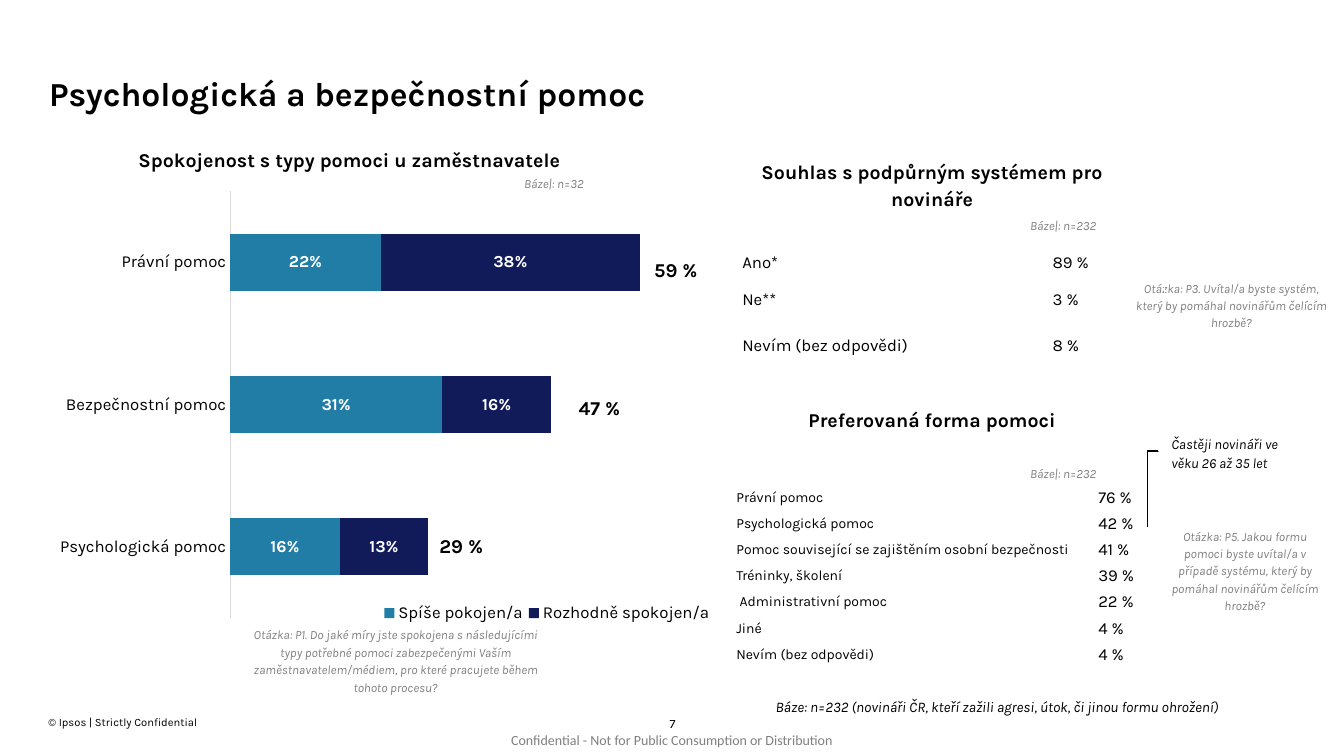
from lxml import etree
from pptx import Presentation
from pptx import util as u
from pptx.chart.data import CategoryChartData
from pptx.dml.color import RGBColor
from pptx.enum import chart as ch, shapes, text
from pptx.oxml import parse_xml
from pptx.oxml.ns import nsdecls, qn

Cm = u.Cm
BLACK, GREY, LEFT, MID = "000000", "808080", text.PP_ALIGN.LEFT, text.PP_ALIGN.CENTER
TOP, HALF, LOW = text.MSO_ANCHOR.TOP, text.MSO_ANCHOR.MIDDLE, text.MSO_ANCHOR.BOTTOM


def hue(code):
    return RGBColor.from_string(code)


def write(words, spot=None, cell=None, size=12, color=BLACK, bold=False,
          italic=False, align=LEFT, anchor=TOP, lead=1.0, face="Karla"):
    """Fill a table cell, or a new text box at spot (left, top, width, height in cm)."""
    if cell is None:
        frame = slide.shapes.add_textbox(*map(Cm, spot)).text_frame
        frame.word_wrap = True
        frame.margin_left = frame.margin_right = frame.margin_top = frame.margin_bottom = 0
        frame.vertical_anchor = anchor
    else:
        frame = cell.text_frame
        cell.margin_left = cell.margin_right = cell.margin_top = Cm(0.03)
        cell.margin_bottom = 0
        cell.vertical_anchor = anchor
        cell.fill.background()
    para = frame.paragraphs[0]
    para.alignment, para.line_spacing = align, lead
    run = para.add_run()
    run.text = words
    font = run.font
    font.name, font.size, font.bold, font.italic = face, u.Pt(size), bold, italic
    font.color.rgb = hue(color)


deck = Presentation()
deck.slide_width, deck.slide_height = Cm(33.86), Cm(19.05)
slide = deck.slides.add_slide(deck.slide_layouts[6])

# Footer
write("© Ipsos | Strictly Confidential", (1.22, 18.03, 12.98, 0.33), size=8, anchor=LOW)
write("7", (16.26, 18.01, 1.37, 0.38), size=9, align=MID, lead=1.1)
write("Confidential - Not for Public Consumption or Distribution",
      (12.88, 18.44, 8.4, 0.43), size=10, color=GREY, face="Calibri")

# Title and base note
write("Psychologická a bezpečnostní pomoc", (1.24, 1.96, 31.39, 1.98),
      size=24, bold=True, lead=0.9)
write("Báze: n=232 (novináři ČR, kteří zažili agresi, útok, či jinou formu ohrožení)",
      (3.18, 16.81, 27.53, 1.98), size=10.5, italic=True,
      align=text.PP_ALIGN.RIGHT, anchor=HALF)

# Satisfaction chart
data = CategoryChartData(number_format='0"%"')
data.categories = ["Právní pomoc", "Bezpečnostní pomoc", "Psychologická pomoc"]
data.add_series("Spíše pokojen/a", (22, 31, 16))
data.add_series("Rozhodně spokojen/a", (38, 16, 13))
chart = slide.shapes.add_chart(ch.XL_CHART_TYPE.BAR_STACKED, Cm(1.22), Cm(4.57),
                               Cm(16.97), Cm(12.09), data).chart
chart.has_title = False
chart.font.name, chart.font.size = "Karla", u.Pt(12)
chart.font.color.rgb = hue(BLACK)

plot = chart.plots[0]
plot.gap_width, plot.overlap, plot.vary_by_categories = 150, 100, False
for part, shade in zip(plot.series, ("217DA6", "121B5A")):
    part.format.fill.solid()
    part.format.fill.fore_color.rgb = hue(shade)
    tags = part.data_labels
    tags.show_value = True
    tags.number_format, tags.number_format_is_linked = '0"%"', False
    tags.position = ch.XL_LABEL_POSITION.CENTER
    tags.font.name, tags.font.size, tags.font.bold = "Karla", u.Pt(12), True
    tags.font.color.rgb = hue("FFFFFF")

names = chart.category_axis
names.reverse_order = True
names.major_tick_mark = ch.XL_TICK_MARK.NONE
names.format.line.color.rgb = hue("D9D9D9")
names.format.line.width = u.Pt(0.75)
scale = chart.value_axis
scale.minimum_scale, scale.maximum_scale = 0, 70
scale.has_major_gridlines = False
scale.visible = False

chart.has_legend = True
legend = chart.legend
legend.position = ch.XL_LEGEND_POSITION.BOTTOM
legend.include_in_layout = False

# Fixed places of the plot and the legend, as shares of the chart
area = chart._chartSpace.chart.plotArea
for owner, inner, place in ((area, True, (0.27, 0.02, 0.71, 0.89)),
                            (legend._element, False, (0.49, 0.87, 0.5, 0.06))):
    for old in owner.findall(qn("c:layout")):
        owner.remove(old)
    layout = parse_xml(f"<c:layout {nsdecls('c')}><c:manualLayout/></c:layout>")
    marks = [("layoutTarget", "inner")] if inner else []
    marks += [("xMode", "edge"), ("yMode", "edge"), *zip("xywh", place)]
    for key, val in marks:
        etree.SubElement(layout[0], qn("c:" + key)).set("val", str(val))
    owner.insert(0 if inner else 1, layout)

# Bar totals
for row, (left, total) in enumerate(((16.48, "59 %"), (14.58, "47 %"), (11.07, "29 %"))):
    write(total, (left, 6.4 + 3.48 * row, 2.36, 0.61), size=14, bold=True, lead=1.15)

# Section heads
for head, spot in (
    ("Spokojenost s typy pomoci u zaměstnavatele", (1.3, 3.63, 15.01, 0.61)),
    ("Souhlas s podpůrným systémem pro novináře", (18.39, 3.94, 10.19, 0.61)),
    ("Preferovaná forma pomoci", (18.39, 10.19, 10.19, 0.61)),
):
    write(head, spot, size=14, bold=True, align=MID, lead=1.15)

# Bases and question wording
for note, spot in (
    ("Báze|: n=32", (10.26, 4.37, 7.39, 0.41)),
    ("Báze|: n=232", (23.09, 5.44, 7.39, 0.41)),
    ("Báze|: n=232", (23.09, 11.68, 7.39, 0.41)),
    ("Otázka: P1. Do jaké míry jste spokojena s následujícími typy potřebné pomoci "
     "zabezpečenými Vaším zaměstnavatelem/médiem, pro které pracujete během tohoto procesu?",
     (6.27, 15.75, 7.39, 1.73)),
    ("Otázka: P3. Uvítal/a byste systém, který by pomáhal novinářům čelícím hrozbě?",
     (28.58, 7.01, 4.88, 1.27)),
    ("Otázka: P5. Jakou formu pomoci byste uvítal/a v případě systému, "
     "který by pomáhal novinářům čelícím hrozbě?", (29.31, 13.26, 4.11, 2.16)),
):
    write(note, spot, size=9, color=GREY, italic=True, align=MID, lead=1.15)

# Answer tables
agree = [("Ano*", "89 %"), ("Ne**", "3 %"), ("Nevím (bez odpovědi)", "8 %")]
forms = [("Právní pomoc", "76 %"), ("Psychologická pomoc", "42 %"),
         ("Pomoc související se zajištěním osobní bezpečnosti", "41 %"),
         ("Tréninky, školení", "39 %"), (" Administrativní pomoc", "22 %"),
         ("Jiné", "4 %"), ("Nevím (bez odpovědi)", "4 %")]
for rows, left, top, wides, highs, size in (
    (agree, 18.67, 6.22, (7.82, 2.84), (0.76, 1.14, 1.14), 12),
    (forms, 18.52, 12.19, (9.12, 1.55), [0.66] * len(forms), 10),
):
    grid = slide.shapes.add_table(len(rows), 2, Cm(left), Cm(top),
                                  Cm(sum(wides)), Cm(sum(highs))).table
    grid.first_row = grid.horz_banding = False
    for col, wide in zip(grid.columns, wides):
        col.width = Cm(wide)
    for r, (pair, high) in enumerate(zip(rows, highs)):
        grid.rows[r].height = Cm(high)
        for c, words in enumerate(pair):
            write(words, cell=grid.cell(r, c), size=(size, 12)[c], anchor=HALF)

# Age remark and its bracket
write("Častěji novináři ve věku 26 až 35 let", (29.51, 10.9, 3.18, 0.94),
      size=10, italic=True, lead=1.15)
hook = slide.shapes.add_connector(shapes.MSO_CONNECTOR.ELBOW, Cm(30), Cm(12.45),
                                  Cm(28.09), Cm(12.19))
hook.line.color.rgb = hue(BLACK)
hook.line.width = u.Pt(1)
props = hook._element.spPr
props.find(qn("a:xfrm")).set("rot", "5400000")
bend = props.find(qn("a:prstGeom")).get_or_add_avLst()
etree.SubElement(bend, qn("a:gd"), name="adj1", fmla="val 99800")
etree.SubElement(props, qn("a:effectLst"))

deck.save("out.pptx")
